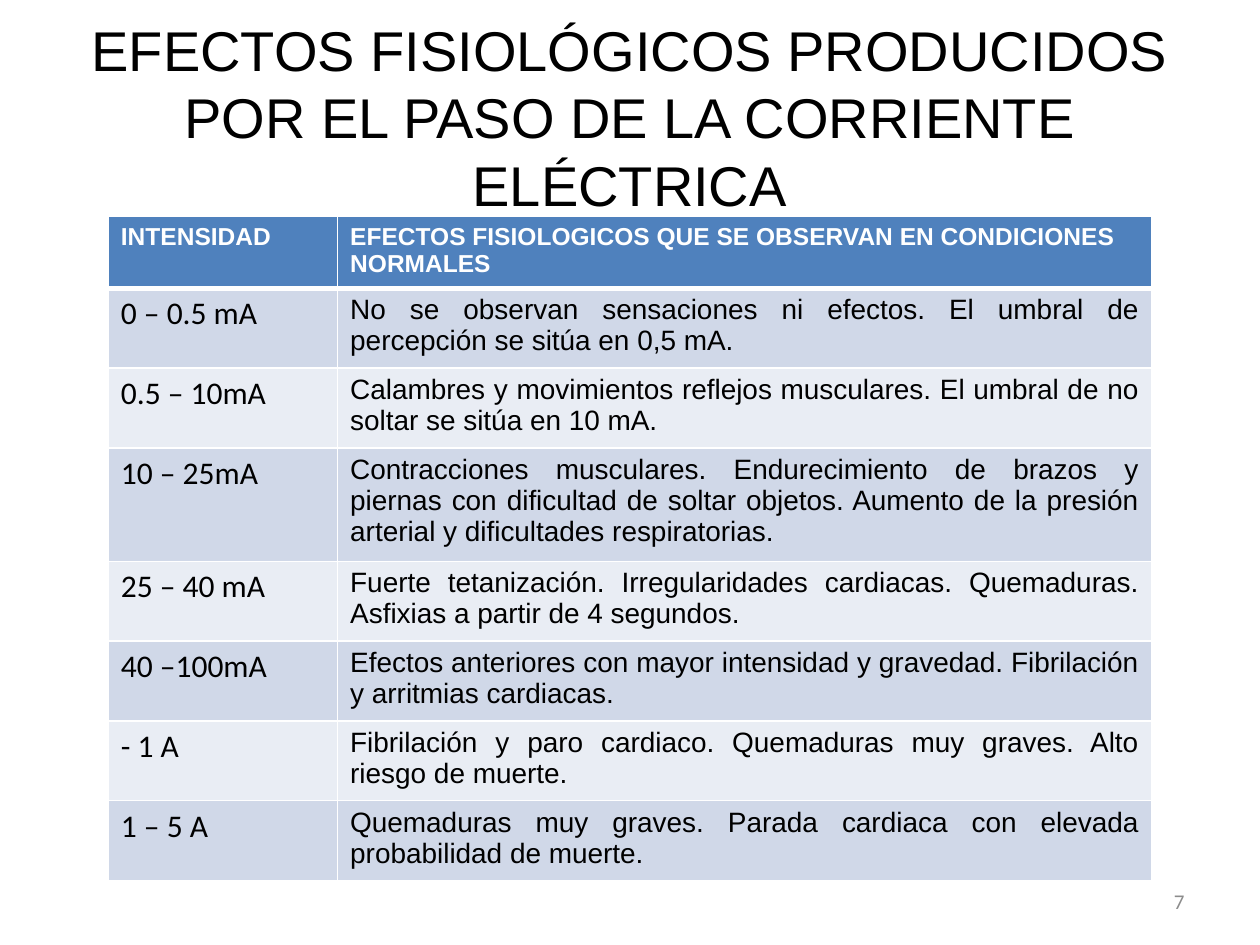
import pptx
import pptx.util
import pptx.dml.color
import pptx.enum.text
import pptx.oxml
import pptx.oxml.ns

Inches = pptx.util.Inches
Pt = pptx.util.Pt
ALIGN = pptx.enum.text.PP_ALIGN

COLORS = {
    "ink": "000000",
    "white": "FFFFFF",
    "header": "4F81BD",
    "odd": "D0D8E8",
    "even": "E9EDF4",
    "number": "8C8C8C",
}
TITLE = "EFECTOS FISIOLÓGICOS PRODUCIDOS POR EL PASO DE LA CORRIENTE ELÉCTRICA"
HEADINGS = ("INTENSIDAD", "EFECTOS FISIOLOGICOS QUE SE OBSERVAN EN CONDICIONES NORMALES")
EFFECTS = [
    ("0 – 0.5 mA", "No se observan sensaciones ni efectos. El umbral de percepción se sitúa en 0,5 mA."),
    ("0.5 – 10mA", "Calambres y movimientos reflejos musculares. El umbral de no soltar se sitúa en 10 mA."),
    ("10 – 25mA", "Contracciones musculares. Endurecimiento de brazos y piernas con dificultad de soltar "
                  "objetos. Aumento de la presión arterial y dificultades respiratorias."),
    ("25 – 40 mA", "Fuerte tetanización. Irregularidades cardiacas. Quemaduras. Asfixias a partir de 4 segundos."),
    ("40 –100mA", "Efectos anteriores con mayor intensidad y gravedad. Fibrilación y arritmias cardiacas."),
    ("- 1 A", "Fibrilación y paro cardiaco. Quemaduras muy graves. Alto riesgo de muerte."),
    ("1 – 5 A", "Quemaduras muy graves. Parada cardiaca con elevada probabilidad de muerte."),
]
ROW_HEIGHTS = [0.55, 0.61, 0.61, 0.87, 0.61, 0.61, 0.61, 0.61]
INTENSITY_WIDTH = 1.82


def rgb(name):
    return pptx.dml.color.RGBColor.from_string(COLORS[name])


def write(frame, text, size, face, color, align, bold=False):
    paragraph = frame.paragraphs[0]
    paragraph.text = text
    paragraph.alignment = align
    paragraph.font.size = Pt(size)
    paragraph.font.name = face
    paragraph.font.bold = bold
    paragraph.font.color.rgb = rgb(color)


def add_label(slide, box, *style):
    frame = slide.shapes.add_textbox(*map(Inches, box)).text_frame
    frame.word_wrap = True
    frame.vertical_anchor = pptx.enum.text.MSO_ANCHOR.MIDDLE
    write(frame, *style)


def add_borders(cell, widths):
    for side, width in widths.items():
        border = pptx.oxml.parse_xml(
            f'<a:ln{side} {pptx.oxml.ns.nsdecls("a")} w="{Pt(width)}"><a:solidFill>'
            f'<a:srgbClr val="{COLORS["white"]}"/></a:solidFill></a:ln{side}>'
        )
        cell._tc.get_or_add_tcPr().append(border)


def add_effects_table(slide, box):
    left, top, width = box
    rows = [HEADINGS, *EFFECTS]
    table = slide.shapes.add_table(
        len(rows), 2, Inches(left), Inches(top), Inches(width), Inches(sum(ROW_HEIGHTS))
    ).table
    table.columns[0].width = Inches(INTENSITY_WIDTH)
    table.columns[1].width = Inches(width - INTENSITY_WIDTH)
    for index, (row, height) in enumerate(zip(rows, ROW_HEIGHTS)):
        table.rows[index].height = Inches(height)
        if index == 0:
            fill = "header"
            styles = [(14, "Arial", "white", ALIGN.LEFT, True)] * 2
        else:
            fill = "odd" if index % 2 else "even"
            styles = [(18, "Calibri", "ink", ALIGN.LEFT), (16, "Arial", "ink", ALIGN.JUSTIFY)]
        borders = {"L": 1, "R": 1, "T": 3 if index == 1 else 1, "B": 3 if index == 0 else 1}
        for column, (text, style) in enumerate(zip(row, styles)):
            cell = table.cell(index, column)
            add_borders(cell, borders)
            cell.fill.solid()
            cell.fill.fore_color.rgb = rgb(fill)
            write(cell.text_frame, text, *style)


def main():
    deck = pptx.Presentation()
    deck.slide_width = Inches(10)
    deck.slide_height = Inches(7.5)
    slide = deck.slides.add_slide(deck.slide_layouts[6])
    add_label(slide, (0.5, 0.3, 9, 1.25), TITLE, 32, "Arial", "ink", ALIGN.CENTER)
    add_label(slide, (7.17, 6.95, 2.33, 0.4), "7", 12, "Calibri", "number", ALIGN.RIGHT)
    add_effects_table(slide, (0.86, 1.72, 8.28))
    deck.save("out.pptx")


if __name__ == "__main__":
    main()
